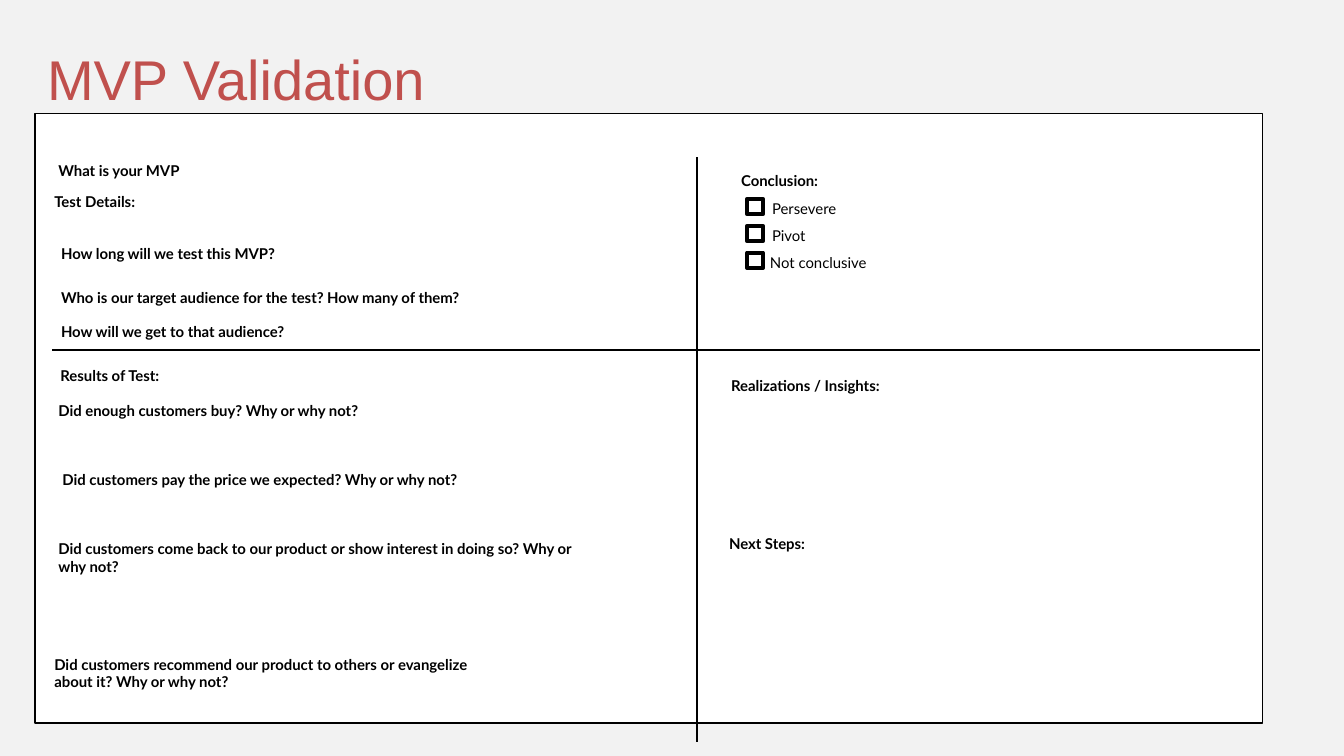
"""Build the MVP Validation worksheet slide."""
from dataclasses import dataclass

from lxml import etree
from pptx import Presentation
from pptx.dml.color import RGBColor
from pptx.enum.shapes import MSO_CONNECTOR, MSO_SHAPE
from pptx.enum.text import MSO_ANCHOR, MSO_AUTO_SIZE
from pptx.oxml.ns import qn
from pptx.util import Inches, Pt

STRAIGHT = MSO_CONNECTOR.STRAIGHT
RECTANGLE = MSO_SHAPE.RECTANGLE
MIDDLE = MSO_ANCHOR.MIDDLE
GROW = MSO_AUTO_SIZE.SHAPE_TO_FIT_TEXT


@dataclass(frozen=True)
class Theme:
    background: str = "F2F2F2"
    panel: str = "FFFFFF"
    ink: str = "000000"
    accent: str = "C0504D"
    title_font: str = "Arial"
    body_font: str = "Lato"
    title_size: float = 60
    title_spacing: float = 87.5
    body_size: float = 16
    rule_width: float = 1.5
    checkbox_width: float = 4.5


THEME = Theme()

TITLE = "MVP Validation"
TITLE_BOX = (0.41, 0.36, 16.5, 1.38)
TITLE_INSETS = (0.29, 0.07, 0.15, 0.07)
PANEL_BOX = (0.52, 1.69, 18.27, 9.07)
DIVIDERS = [(10.37, 11.04, 10.37, 2.34), (0.78, 5.21, 18.75, 5.21)]

# left, top, width, line count, wording
PROMPTS = [
    (0.77, 2.36, 3.61, 1, "What is your MVP"),
    (0.71, 2.82, 3.61, 1, "Test Details:"),
    (0.81, 3.59, 4.39, 1, "How long will we test this MVP?"),
    (0.81, 4.24, 8.03, 1, "Who is our target audience for the test? How many of them?"),
    (0.81, 4.75, 4.66, 1, "How will we get to that audience?"),
    (0.8, 5.41, 3.61, 1, "Results of Test:"),
    (0.77, 5.93, 5.74, 1, "Did enough customers buy? Why or why not?"),
    (0.83, 6.95, 7.76, 1, "Did customers pay the price we expected? Why or why not?"),
    (0.77, 7.98, 7.9, 2,
     "Did customers come back to our product or show interest in doing so? Why or why not?"),
    (0.71, 9.7, 6.91, 2,
     "Did customers recommend our product to others or evangelize about it? Why or why not?"),
    (10.93, 2.51, 3.61, 1, "Conclusion:"),
    (10.78, 5.55, 3.61, 1, "Realizations / Insights:"),
    (10.75, 7.9, 5.09, 1, "Next Steps:"),
]
OUTCOMES = [(11.39, 1.42, "Persevere"), (11.39, 0.88, "Pivot"), (11.36, 2.09, "Not conclusive")]
OUTCOME_TOP, OUTCOME_STEP = 2.92, 0.4
CHECKBOX_LEFT, CHECKBOX_DROP, CHECKBOX_SIDE = 11.12, 0.04, 0.23
LINE_HEIGHT, TEXT_PADDING = 0.27, 0.1


def color(value):
    return RGBColor.from_string(value)


def add_text(slide, box, text, font, size, ink, bold=False):
    shape = slide.shapes.add_textbox(*map(Inches, box))
    frame = shape.text_frame
    frame.word_wrap = True
    run = frame.paragraphs[0].add_run()
    run.text = text
    run.font.name = font
    run.font.size = Pt(size)
    run.font.bold = bold
    run.font.color.rgb = color(ink)
    return frame


def add_body(slide, left, top, width, lines, text, bold):
    box = (left, top, width, TEXT_PADDING + lines * LINE_HEIGHT)
    frame = add_text(slide, box, text, THEME.body_font, THEME.body_size, THEME.ink, bold)
    frame.auto_size = GROW


def add_title(slide):
    frame = add_text(slide, TITLE_BOX, TITLE, THEME.title_font, THEME.title_size, THEME.accent)
    frame.vertical_anchor = MIDDLE
    (frame.margin_left, frame.margin_top,
     frame.margin_right, frame.margin_bottom) = map(Inches, TITLE_INSETS)
    frame.paragraphs[0].line_spacing = Pt(THEME.title_spacing)


def add_rectangle(slide, box, line_width, fill=None):
    shape = slide.shapes.add_shape(RECTANGLE, *map(Inches, box))
    shape.shadow.inherit = False
    if fill:
        shape.fill.solid()
        shape.fill.fore_color.rgb = color(fill)
    else:
        shape.fill.background()
    shape.line.color.rgb = color(THEME.ink)
    shape.line.width = Pt(line_width)


def add_divider(slide, ends):
    connector = slide.shapes.add_connector(STRAIGHT, *map(Inches, ends))
    connector.line.color.rgb = color(THEME.ink)
    connector.line.width = Pt(THEME.rule_width)
    etree.SubElement(connector._element.spPr, qn("a:effectLst"))


def main():
    presentation = Presentation()
    presentation.slide_width = Inches(20)
    presentation.slide_height = Inches(11.25)
    slide = presentation.slides.add_slide(presentation.slide_layouts[6])
    slide.background.fill.solid()
    slide.background.fill.fore_color.rgb = color(THEME.background)

    add_title(slide)
    add_rectangle(slide, PANEL_BOX, THEME.rule_width, THEME.panel)
    for ends in DIVIDERS:
        add_divider(slide, ends)
    for prompt in PROMPTS:
        add_body(slide, *prompt, bold=True)
    for index, (left, width, label) in enumerate(OUTCOMES):
        top = OUTCOME_TOP + index * OUTCOME_STEP
        checkbox = (CHECKBOX_LEFT, top + CHECKBOX_DROP, CHECKBOX_SIDE, CHECKBOX_SIDE)
        add_rectangle(slide, checkbox, THEME.checkbox_width)
        add_body(slide, left, top, width, 1, label, bold=False)

    presentation.save("out.pptx")


if __name__ == "__main__":
    main()
